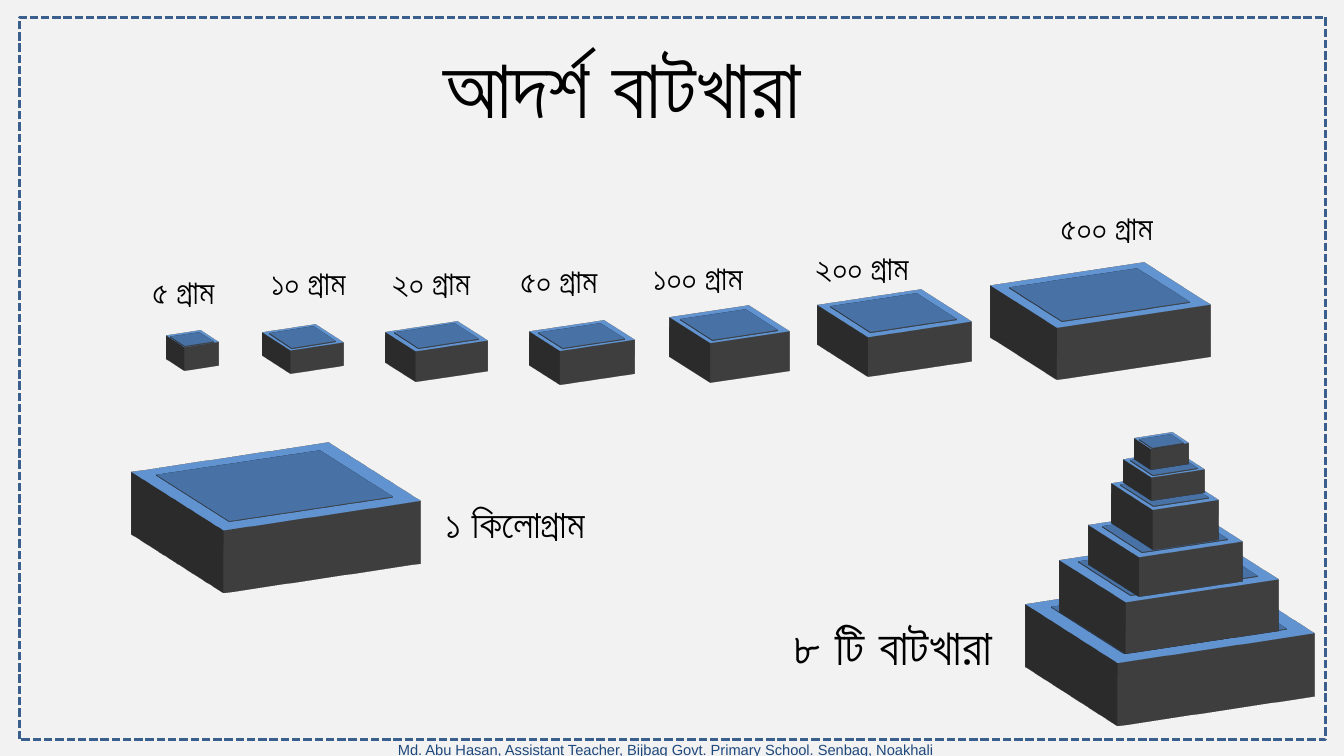
from lxml import etree
from pptx import Presentation, util as u
from pptx.dml.color import RGBColor
from pptx.enum import dml, shapes, text
from pptx.oxml import ns

INK, TOP, PLATE, SIDE = "000000", "4F81BD", "376092", "7F7F7F"


def color(code):
    return RGBColor.from_string(code)


def node(root, tag, **attrs):
    return etree.SubElement(root, ns.qn("a:" + tag), attrs)


def write(shape, words, size=24, ink=INK, bold=False, wrap=True, align=text.PP_ALIGN.LEFT):
    frame = shape.text_frame
    frame.word_wrap = wrap
    frame.auto_size = text.MSO_AUTO_SIZE.SHAPE_TO_FIT_TEXT
    frame.vertical_anchor = text.MSO_ANCHOR.TOP
    para = frame.paragraphs[0]
    para.alignment = align
    run = para.add_run()
    run.text = words
    font = run.font
    font.name, font.size, font.bold = "Arial", u.Pt(size), bold
    font.color.rgb = color(ink)
    node(run.font._element, "cs", typeface="+mn-cs")


def extrude(shape, depth):
    """Tilt a flat shape and give it depth."""
    props = shape._element.spPr
    scene = node(props, "scene3d")
    node(scene, "camera", prst="isometricOffAxis1Top")
    node(scene, "lightRig", rig="threePt", dir="t")
    solid = node(props, "sp3d", extrusionH=str(u.Inches(depth)))
    node(node(solid, "extrusionClr"), "srgbClr", val=SIDE)


class Deck:
    def __init__(self, width, height, back):
        self.show = Presentation()
        self.show.slide_width = u.Inches(width)
        self.show.slide_height = u.Inches(height)
        self.slide = self.show.slides.add_slide(self.show.slide_layouts[5])
        self.slide.background.fill.solid()
        self.slide.background.fill.fore_color.rgb = color(back)

    def title(self, box, words, **style):
        head = self.slide.shapes.title
        head.left, head.top, head.width, head.height = map(u.Inches, box)
        write(head, words, **style)

    def label(self, box, words, **style):
        write(self.slide.shapes.add_textbox(*map(u.Inches, box)), words, **style)

    def rect(self, home, box):
        rect = home.shapes.add_shape(shapes.MSO_SHAPE.RECTANGLE, *map(u.Inches, box))
        rect.shadow.inherit = False
        return rect

    def border(self, box, ink, width):
        rect = self.rect(self.slide, box)
        rect.fill.background()
        rect.line.color.rgb = color(ink)
        rect.line.width = u.Pt(width)
        rect.line.dash_style = dml.MSO_LINE.SQUARE_DOT

    def stack(self, *blocks):
        """Group weights, each given by its top rectangle and its depth."""
        group = self.slide.shapes.add_group_shape()
        for x, y, w, h, depth in blocks:
            plate = (x + 0.08 * w, y + 0.1 * h, 0.83 * w, 0.79 * h)
            for box, fill, deep in (((x, y, w, h), TOP, depth), (plate, PLATE, 0.01)):
                rect = self.rect(group, box)
                rect.fill.solid()
                rect.fill.fore_color.rgb = color(fill)
                rect.line.fill.background()
                extrude(rect, deep)


def main():
    deck = Deck(13.33, 7.5, "F2F2F2")

    # Frame, footer and title
    deck.label((3.5, 7.3, 6.21, 0.28),
               "Md. Abu Hasan, Assistant Teacher, Bijbag Govt. Primary School. Senbag, Noakhali",
               size=10.5, ink="1F497D", align=text.PP_ALIGN.CENTER)
    deck.border((0.19, 0.17, 12.96, 7.17), "3A5F8C", 2)
    deck.title((4.3, 0.29, 3.95, 1.11), "আদর্শ বাটখারা", size=60, bold=True, wrap=False)

    # Row of gram weights: block, then label place and words
    grams = [
        ((1.72, 3.16, 0.38, 0.41, 0.24), (1.41, 2.64, 0.98), "৫ গ্রাম"),
        ((2.71, 3.03, 0.59, 0.64, 0.24), (2.59, 2.55, 1.13), "১০ গ্রাম"),
        ((3.93, 2.99, 0.8, 0.69, 0.32), (3.79, 2.55, 1.15), "২০ গ্রাম"),
        ((5.36, 2.99, 0.82, 0.69, 0.35), (5.06, 2.53, 1.16), "৫০ গ্রাম"),
        ((6.8, 2.76, 0.87, 0.92, 0.41), (6.38, 2.5, 1.26), "১০০ গ্রাম"),
        ((8.3, 2.54, 1.14, 1.14, 0.41), (7.99, 2.4, 1.33), "২০০ গ্রাম"),
        ((10.07, 2.18, 1.69, 1.5, 0.54), (10.42, 2, 1.34), "৫০০ গ্রাম"),
    ]
    for block, place, words in grams:
        deck.stack(block)
        deck.label((*place, 0.5), words)

    # Kilogram weight
    deck.stack((1.65, 3.79, 2.17, 2.08, 0.65))
    deck.label((4.32, 4.9, 1.66, 0.57), "১ কিলোগ্রাম", size=28, bold=True, wrap=False)

    # Stack of weights, from the bottom up
    deck.stack(
        (10.52, 5.1, 2.17, 2.08, 0.65),
        (10.75, 4.9, 1.69, 1.5, 0.54),
        (10.99, 4.72, 1.14, 1.14, 0.41),
        (11.19, 4.41, 0.73, 0.94, 0.41),
        (11.25, 4.29, 0.59, 0.64, 0.24),
        (11.31, 4.19, 0.42, 0.37, 0.21),
    )
    deck.label((7.73, 6.05, 2.25, 0.71), "৮ টি বাটখারা", size=36, bold=True,
               wrap=False, align=text.PP_ALIGN.CENTER)

    deck.show.save("out.pptx")


if __name__ == "__main__":
    main()
